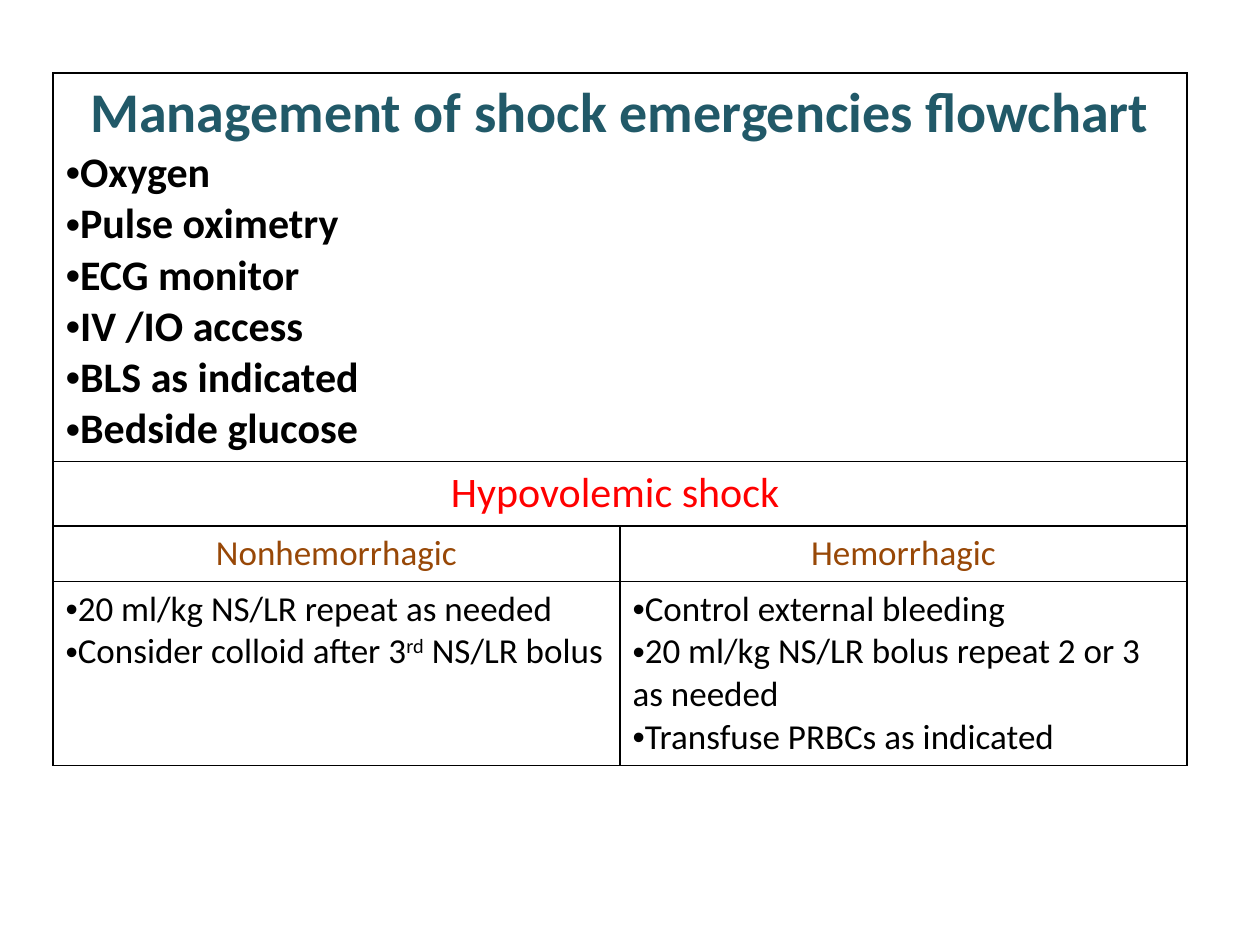
from typing import NamedTuple

from lxml.etree import SubElement
from pptx import Presentation
from pptx.dml.color import RGBColor
from pptx.enum.text import PP_ALIGN as Align
from pptx.oxml import parse_xml
from pptx.oxml.ns import nsdecls, qn
from pptx.util import Inches, Pt

SLIDE_WIDTH, SLIDE_HEIGHT = Inches(10), Inches(7.5)
FONT = "Calibri"
COLORS = {"title": "215968", "shock": "FF0000", "type": "984807",
          "text": "000000", "border": "000000"}
ROW_HEIGHTS = (3.08, 0.51, 0.44, 1.46)
COLUMN_WIDTH = 4.5


class Line(NamedTuple):
    """One paragraph; pieces at odd positions are superscript."""
    pieces: tuple[str, ...]
    size: int
    color: str = "text"
    bold: bool = False
    bullet: bool = False


class Entry(NamedTuple):
    row: int
    column: int
    lines: list[Line]
    span: int = 1


def heading(text: str, size: int, color: str, bold: bool = False) -> Line:
    return Line((text,), size, color, bold)


def bullets(*items: str | tuple[str, ...], size: int, bold: bool = False) -> list[Line]:
    return [Line((item,) if isinstance(item, str) else item, size, bold=bold, bullet=True)
            for item in items]


ENTRIES = [
    Entry(0, 0, [heading("Management of shock emergencies flowchart", 32, "title", True),
                 *bullets("Oxygen", "Pulse oximetry", "ECG monitor", "IV /IO access",
                          "BLS as indicated", "Bedside glucose", size=24, bold=True)], span=2),
    Entry(1, 0, [heading("Hypovolemic shock ", 24, "shock")], span=2),
    Entry(2, 0, [heading("Nonhemorrhagic", 20, "type")]),
    Entry(2, 1, [heading("Hemorrhagic", 20, "type")]),
    Entry(3, 0, bullets("20 ml/kg NS/LR repeat as needed",
                        ("Consider colloid after 3", "rd", " NS/LR bolus"), size=20)),
    Entry(3, 1, bullets("Control external bleeding",
                        "20 ml/kg NS/LR bolus repeat 2 or 3 as needed",
                        "Transfuse PRBCs as indicated", size=20)),
]


def add_text(paragraph, text: str, *, size: int, color: str, bold: bool,
             superscript: bool = False) -> None:
    run = paragraph.add_run()
    run.text = text
    font = run.font
    font.name, font.size, font.bold = FONT, Pt(size), bold
    font.color.rgb = RGBColor.from_string(COLORS[color])
    if superscript:
        run._r.get_or_add_rPr().set("baseline", "30000")


def write_line(paragraph, line: Line) -> None:
    paragraph.alignment = Align.LEFT if line.bullet else Align.CENTER
    if line.bullet:
        properties = paragraph._p.get_or_add_pPr()
        properties.set("marL", "0")
        properties.set("indent", "0")
        SubElement(properties, qn("a:buFont")).set("typeface", "Arial")
        SubElement(properties, qn("a:buChar")).set("char", "•")
    for index, piece in enumerate(line.pieces):
        add_text(paragraph, piece, size=line.size, color=line.color, bold=line.bold,
                 superscript=index % 2 == 1)


def outline(cell) -> None:
    """Clear the cell's fill and draw its four borders."""
    cell.fill.background()
    properties = cell._tc.get_or_add_tcPr()
    for index, side in enumerate("LRTB"):
        properties.insert(index, parse_xml(
            f'<a:ln{side} {nsdecls("a")} w="{Pt(1)}"><a:solidFill>'
            f'<a:srgbClr val="{COLORS["border"]}"/></a:solidFill></a:ln{side}>'))


def fill_entry(table, entry: Entry) -> None:
    cell = table.cell(entry.row, entry.column)
    if entry.span > 1:
        cell.merge(table.cell(entry.row, entry.column + entry.span - 1))
    frame = cell.text_frame
    for index, line in enumerate(entry.lines):
        write_line(frame.add_paragraph() if index else frame.paragraphs[0], line)


def main() -> None:
    presentation = Presentation()
    presentation.slide_width, presentation.slide_height = SLIDE_WIDTH, SLIDE_HEIGHT
    slide = presentation.slides.add_slide(presentation.slide_layouts[6])
    flowchart = slide.shapes.add_table(
        len(ROW_HEIGHTS), 2, Inches(0.42), Inches(0.58),
        Inches(2 * COLUMN_WIDTH), Inches(sum(ROW_HEIGHTS))).table
    flowchart.first_row = flowchart.horz_banding = False
    for row, height in zip(flowchart.rows, ROW_HEIGHTS):
        row.height = Inches(height)
    for cell in flowchart.iter_cells():
        outline(cell)
    for entry in ENTRIES:
        fill_entry(flowchart, entry)
    presentation.save("out.pptx")


if __name__ == "__main__":
    main()
